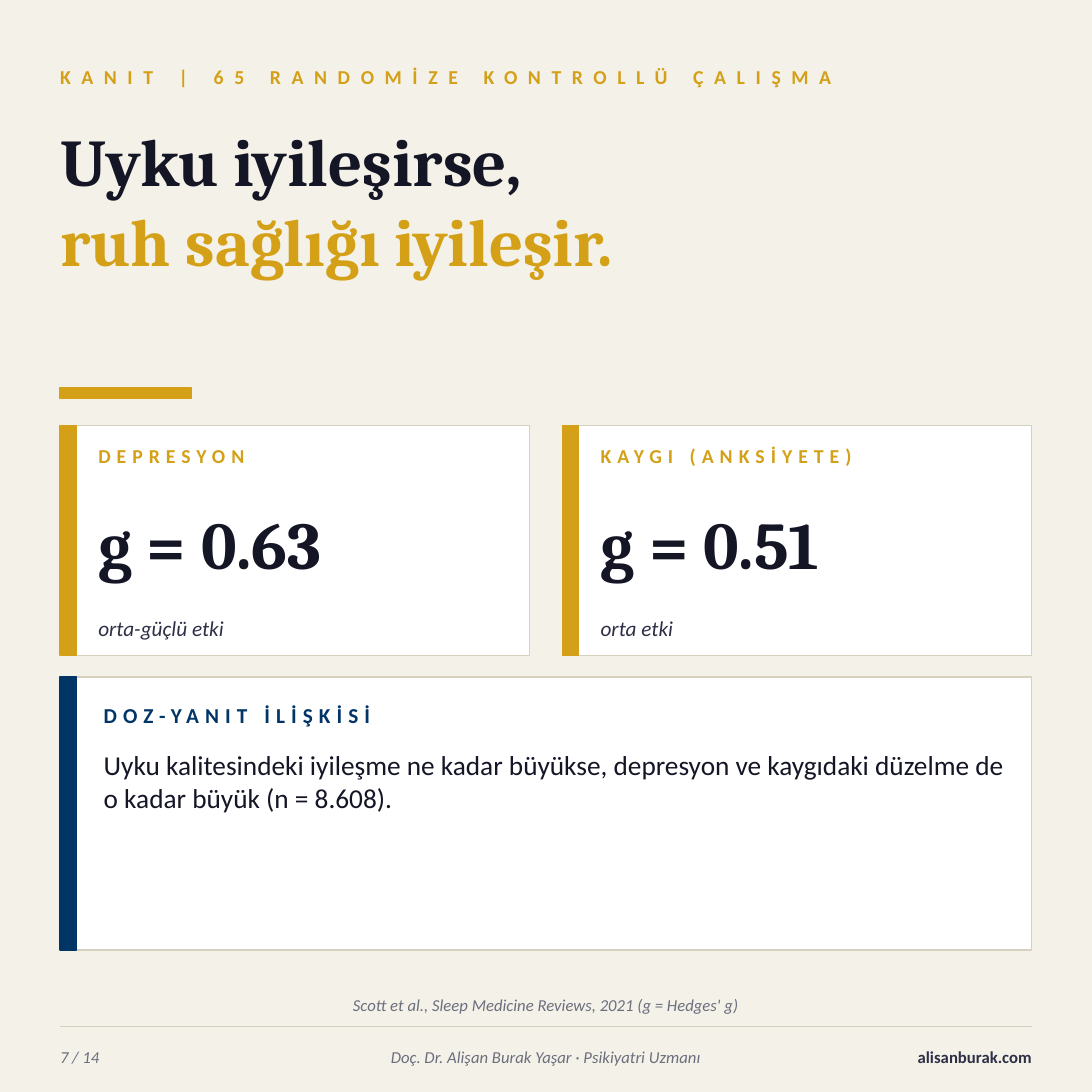
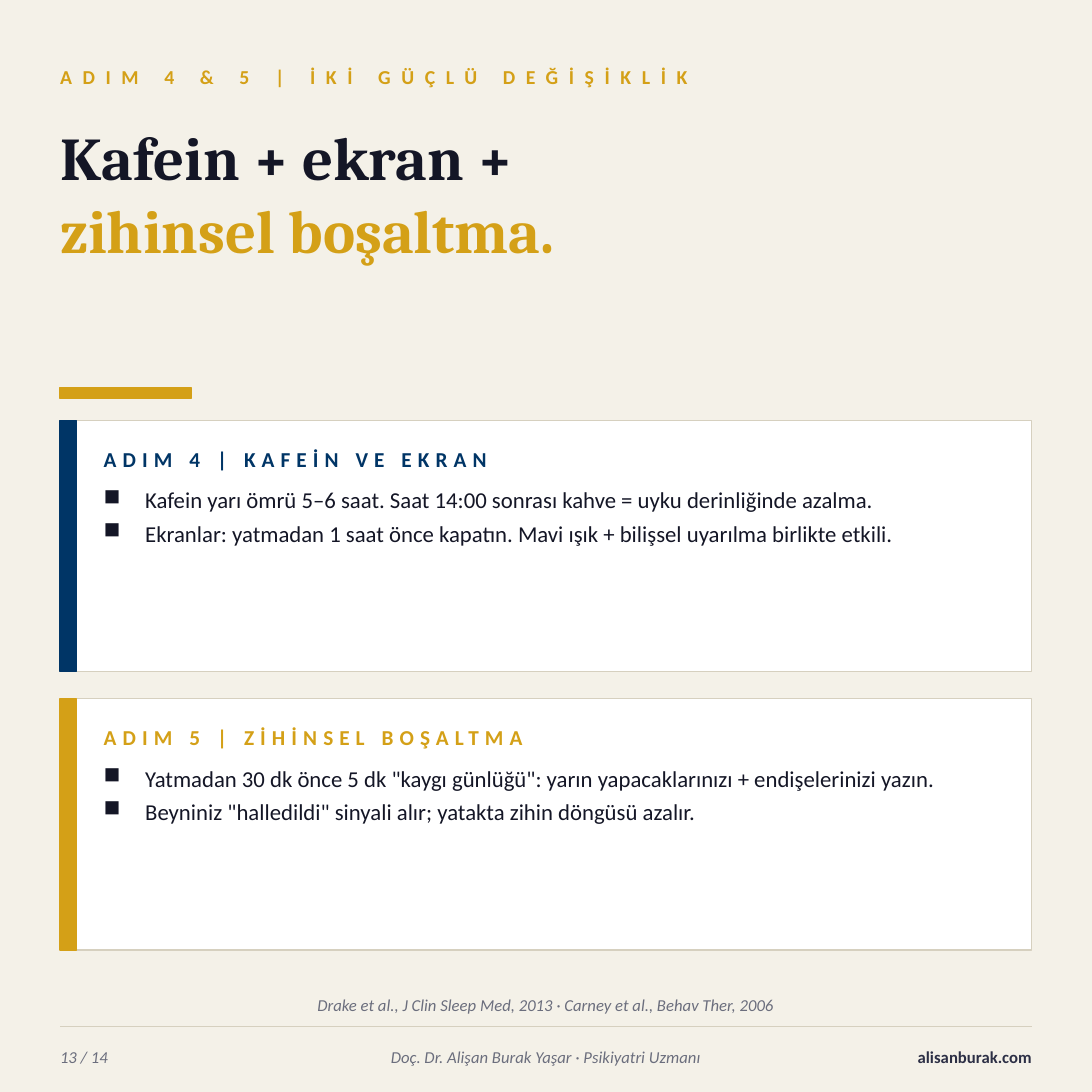
from dataclasses import dataclass
from typing import Any

from lxml import etree
from pptx import Presentation
from pptx.dml.color import RGBColor
from pptx.enum.shapes import MSO_CONNECTOR, MSO_SHAPE
from pptx.enum.text import MSO_ANCHOR, PP_ALIGN
from pptx.oxml.ns import qn
from pptx.slide import Slide
from pptx.util import Pt

RECTANGLE = MSO_SHAPE.RECTANGLE
STRAIGHT = MSO_CONNECTOR.STRAIGHT
TOP, MIDDLE = MSO_ANCHOR.TOP, MSO_ANCHOR.MIDDLE
LEFT, CENTER, RIGHT = PP_ALIGN.LEFT, PP_ALIGN.CENTER, PP_ALIGN.RIGHT

CREAM = RGBColor(0xF4, 0xF1, 0xE8)
WHITE = RGBColor(0xFF, 0xFF, 0xFF)
GOLD = RGBColor(0xD4, 0xA0, 0x17)
NAVY = RGBColor(0x00, 0x35, 0x66)
INK = RGBColor(0x14, 0x16, 0x26)
SLATE = RGBColor(0x2C, 0x2F, 0x45)
GREY = RGBColor(0x6B, 0x6E, 0x7D)
BORDER = RGBColor(0xD6, 0xD0, 0xBF)

PAGE_SIZE = 720
MARGIN = 39.6
CONTENT_WIDTH = PAGE_SIZE - 2 * MARGIN
BAR_WIDTH = 10.8
BULLET_INDENT = 27.36

CARD_TOP, CARD_HEIGHT, CARD_GAP = 280.8, 151.2, 21.6
CARD_WIDTH = (CONTENT_WIDTH - CARD_GAP) / 2
CARD_INSET, CARD_TEXT_WIDTH = 25.2, 277.2
PANEL_INSET, PANEL_TEXT_WIDTH = 28.8, 604.8
PANELS_BOTTOM = 626.4

AUTHOR = "Doç. Dr. Alişan Burak Yaşar · Psikiyatri Uzmanı"
WEBSITE = "alisanburak.com"
PAGE_COUNT = 14


@dataclass(frozen=True)
class Area:
    left: float
    top: float
    width: float
    height: float

    def lengths(self) -> list[int]:
        return [Pt(value) for value in (self.left, self.top, self.width, self.height)]


@dataclass(frozen=True)
class Style:
    font: dict[str, Any]
    color: RGBColor
    tracking: float = 0


@dataclass(frozen=True)
class Card:
    label: str
    value: str
    note: str


@dataclass(frozen=True)
class Panel:
    top: float
    height: float
    accent: RGBColor
    label: str
    lines: list[str]
    bulleted: bool = False


@dataclass(frozen=True)
class Page:
    number: int
    kicker: str
    title: tuple[str, str]
    title_size: float
    cards: list[Card]
    panels: list[Panel]
    source: str


def sans(size: float, **extra: Any) -> dict[str, Any]:
    return {"name": "Calibri", "size": Pt(size), **extra}


def serif(size: float) -> dict[str, Any]:
    return {"name": "Cambria", "size": Pt(size), "bold": True}


KICKER = Style(sans(13, bold=True), GOLD, 7)
CARD_LABEL = Style(sans(13, bold=True), GOLD, 4)
CARD_VALUE = Style(serif(44), INK)
CARD_NOTE = Style(sans(14, italic=True), SLATE)
PROSE = Style(sans(18), INK)
BULLETS = Style(sans(15), INK)
SMALL = Style(sans(11, italic=True), GREY)
SITE = Style(sans(11, bold=True), SLATE)

PAGES = [
    Page(
        7,
        "KANIT | 65 RANDOMİZE KONTROLLÜ ÇALIŞMA",
        ("Uyku iyileşirse,", "ruh sağlığı iyileşir."),
        44,
        [
            Card("DEPRESYON", "g = 0.63", "orta-güçlü etki"),
            Card("KAYGI (ANKSİYETE)", "g = 0.51", "orta etki"),
        ],
        [
            Panel(PANELS_BOTTOM - 180, 180, NAVY, "DOZ-YANIT İLİŞKİSİ", [
                "Uyku kalitesindeki iyileşme ne kadar büyükse, depresyon ve "
                "kaygıdaki düzelme de o kadar büyük (n = 8.608).",
            ]),
        ],
        "Scott et al., Sleep Medicine Reviews, 2021 (g = Hedges' g)",
    ),
    Page(
        13,
        "ADIM 4 & 5 | İKİ GÜÇLÜ DEĞİŞİKLİK",
        ("Kafein + ekran +", "zihinsel boşaltma."),
        40,
        [],
        [
            Panel(277.2, 165.6, NAVY, "ADIM 4 | KAFEİN VE EKRAN", [
                "Kafein yarı ömrü 5–6 saat. Saat 14:00 sonrası kahve = uyku "
                "derinliğinde azalma.",
                "Ekranlar: yatmadan 1 saat önce kapatın. Mavi ışık + bilişsel "
                "uyarılma birlikte etkili.",
            ], bulleted=True),
            Panel(PANELS_BOTTOM - 165.6, 165.6, GOLD, "ADIM 5 | ZİHİNSEL BOŞALTMA", [
                'Yatmadan 30 dk önce 5 dk "kaygı günlüğü": yarın yapacaklarınızı '
                "+ endişelerinizi yazın.",
                'Beyniniz "halledildi" sinyali alır; yatakta zihin döngüsü azalır.',
            ], bulleted=True),
        ],
        "Drake et al., J Clin Sleep Med, 2013 · Carney et al., Behav Ther, 2006",
    ),
]


def add_text(
    slide: Slide,
    area: Area,
    lines: list[tuple[str, Style]],
    anchor: MSO_ANCHOR = MIDDLE,
    align: PP_ALIGN = LEFT,
    bulleted: bool = False,
) -> None:
    """Add a text box without insets, one paragraph per styled line."""
    frame = slide.shapes.add_textbox(*area.lengths()).text_frame
    settings = {
        "word_wrap": True, "vertical_anchor": anchor,
        "margin_left": 0, "margin_top": 0, "margin_right": 0, "margin_bottom": 0,
    }
    for name, value in settings.items():
        setattr(frame, name, value)
    for index, (text, style) in enumerate(lines):
        para = frame.add_paragraph() if index else frame.paragraphs[0]
        para.alignment = align
        if bulleted:
            add_bullet(para)
            if index < len(lines) - 1:
                para.space_after = Pt(4)
        span = para.add_run()
        span.text = text
        for name, value in style.font.items():
            setattr(span.font, name, value)
        span.font.color.rgb = style.color
        if style.tracking:
            span._r.get_or_add_rPr().set("spc", str(round(style.tracking * 100)))


def add_bullet(para: Any) -> None:
    properties = para._p.get_or_add_pPr()
    properties.set("marL", str(Pt(BULLET_INDENT)))
    properties.set("indent", str(-Pt(BULLET_INDENT)))
    etree.SubElement(properties, qn("a:buChar")).set("char", "■")


def add_rectangle(
    slide: Slide, area: Area, fill: RGBColor, line: RGBColor, line_width: float
) -> None:
    box = slide.shapes.add_shape(RECTANGLE, *area.lengths())
    box.shadow.inherit = False
    box.fill.solid()
    box.fill.fore_color.rgb = fill
    box.line.color.rgb = line
    box.line.width = Pt(line_width)


def add_accent_box(slide: Slide, area: Area, accent: RGBColor) -> None:
    """Add a white box with a coloured bar along its left edge."""
    add_rectangle(slide, area, WHITE, BORDER, 0.75)
    bar = Area(area.left, area.top, BAR_WIDTH, area.height)
    add_rectangle(slide, bar, accent, accent, 1)


def add_header(slide: Slide, page: Page) -> None:
    add_text(slide, Area(MARGIN, 36, CONTENT_WIDTH, 28.8), [(page.kicker, KICKER)])
    title = [
        (text, Style(serif(page.title_size), color))
        for text, color in zip(page.title, (INK, GOLD))
    ]
    add_text(slide, Area(MARGIN, 79.2, CONTENT_WIDTH, 172.8), title, anchor=TOP)
    add_rectangle(slide, Area(MARGIN, 255.6, 86.4, 7.2), GOLD, GOLD, 1)


def add_card(slide: Slide, card: Card, left: float) -> None:
    add_accent_box(slide, Area(left, CARD_TOP, CARD_WIDTH, CARD_HEIGHT), GOLD)
    rows = [
        (7.2, 25.2, card.label, CARD_LABEL),
        (36, 82.8, card.value, CARD_VALUE),
        (118.8, 28.8, card.note, CARD_NOTE),
    ]
    for offset, height, text, style in rows:
        area = Area(left + CARD_INSET, CARD_TOP + offset, CARD_TEXT_WIDTH, height)
        add_text(slide, area, [(text, style)])


def add_panel(slide: Slide, panel: Panel) -> None:
    add_accent_box(
        slide, Area(MARGIN, panel.top, CONTENT_WIDTH, panel.height), panel.accent
    )
    left = MARGIN + PANEL_INSET
    label_style = Style(sans(14, bold=True), panel.accent, 4)
    label_area = Area(left, panel.top + 10.8, PANEL_TEXT_WIDTH, 28.8)
    add_text(slide, label_area, [(panel.label, label_style)])

    offset, bottom_gap, style = (
        (43.2, 3.6, BULLETS) if panel.bulleted else (46.8, 7.2, PROSE)
    )
    body_height = panel.height - offset - bottom_gap
    add_text(
        slide,
        Area(left, panel.top + offset, PANEL_TEXT_WIDTH, body_height),
        [(line, style) for line in panel.lines],
        anchor=TOP,
        bulleted=panel.bulleted,
    )


def add_footer(slide: Slide, page: Page) -> None:
    source_area = Area(MARGIN, 651.6, CONTENT_WIDTH, 21.6)
    add_text(slide, source_area, [(page.source, SMALL)], align=CENTER)
    ends = (MARGIN, 676.8, PAGE_SIZE - MARGIN, 676.8)
    rule = slide.shapes.add_connector(STRAIGHT, *(Pt(value) for value in ends))
    rule.line.color.rgb = BORDER
    rule.line.width = Pt(0.75)
    etree.SubElement(rule._element.spPr, qn("a:effectLst"))
    parts = [
        (MARGIN, 108, f"{page.number} / {PAGE_COUNT}", SMALL, LEFT),
        (144, 432, AUTHOR, SMALL, CENTER),
        (547.2, 133.2, WEBSITE, SITE, RIGHT),
    ]
    for left, width, text, style, align in parts:
        add_text(slide, Area(left, 684, width, 25.2), [(text, style)], align=align)


def main() -> None:
    deck = Presentation()
    deck.slide_width = deck.slide_height = Pt(PAGE_SIZE)
    for page in PAGES:
        slide = deck.slides.add_slide(deck.slide_layouts[6])
        slide.background.fill.solid()
        slide.background.fill.fore_color.rgb = CREAM
        add_header(slide, page)
        for index, card in enumerate(page.cards):
            add_card(slide, card, MARGIN + index * (CARD_WIDTH + CARD_GAP))
        for panel in page.panels:
            add_panel(slide, panel)
        add_footer(slide, page)
    deck.save("out.pptx")


if __name__ == "__main__":
    main()
